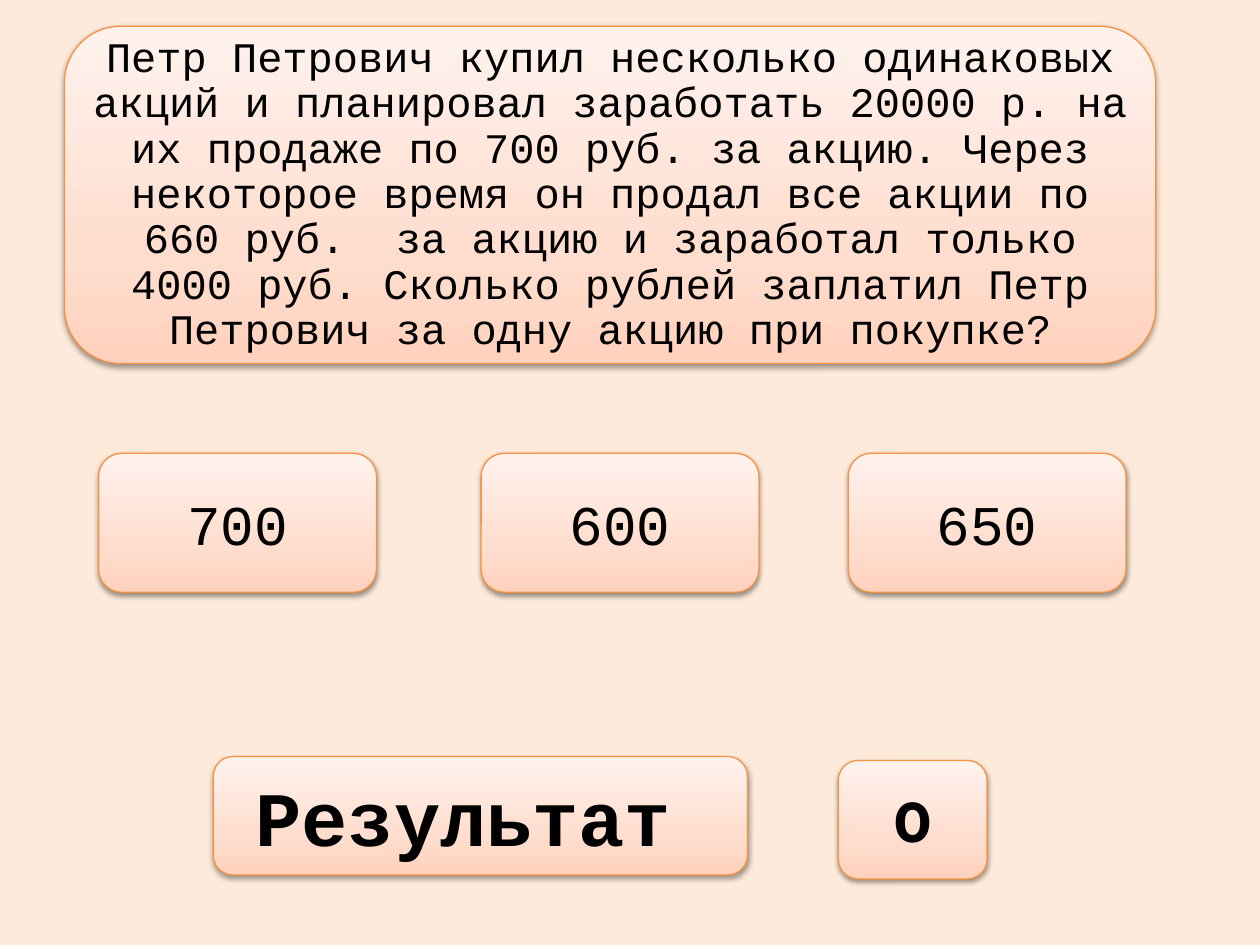
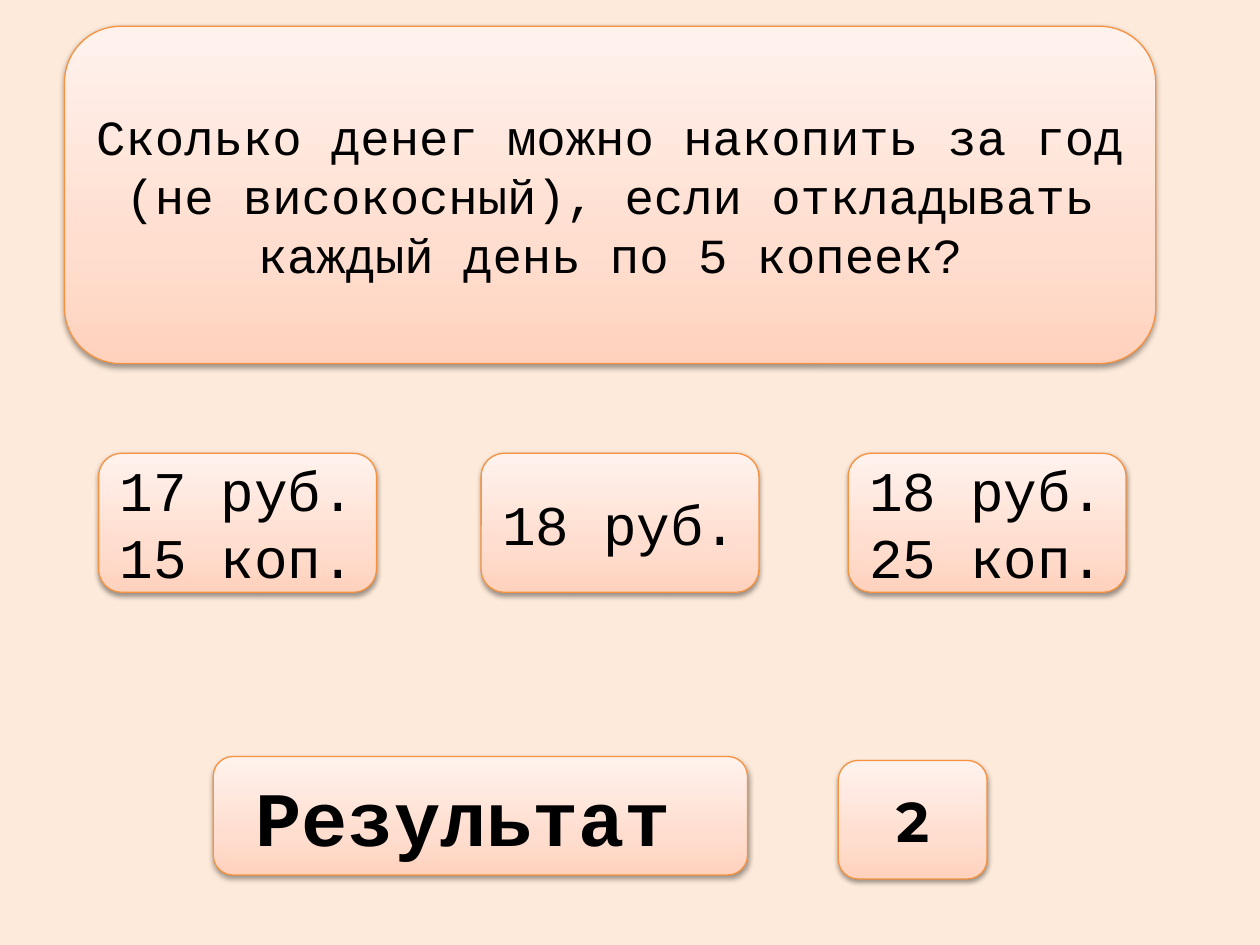
from copy import deepcopy
from dataclasses import dataclass

from lxml import etree
from pptx import Presentation, util as u
from pptx.dml.color import RGBColor
from pptx.enum import shapes, text
from pptx.oxml.ns import qn


@dataclass(frozen=True)
class Theme:
    page: str = "FDEADA"
    ink: str = "000000"
    edge: str = "F69240"
    shadow: str = "000000"
    card_stops: tuple = ((0, "FFD2BD"), (35, "FFDED0"), (100, "FFF2ED"))
    body_font: str = "Courier New"
    score_font: str = "Montserrat"
    long_question: int = 24
    question: int = 28
    answer: int = 32
    result: int = 44
    tight_spacing: float = 0.9


THEME = Theme()

# Boxes are left, top, width, height in centimetres.
QUESTION_BOX = (1.3, 0.53, 22, 6.8)
ANSWERS_BOX = (1.99, 9.14, 20.7, 2.8)
RESULT_BOX = (4.3, 15.25, 15.6, 2.47)

QUIZ = (
    {
        "question": "Петр Петрович купил несколько одинаковых акций и планировал "
        "заработать 20000 р. на их продаже по 700 руб. за акцию. Через некоторое "
        "время он продал все акции по 660 руб.  за акцию и заработал только "
        "4000 руб. Сколько рублей заплатил Петр Петрович за одну акцию при покупке?",
        "question_format": {
            "size": THEME.long_question, "spacing": THEME.tight_spacing},
        "answers": ("700", "600", "650"),
        "score": "0",
    },
    {
        "question": "Сколько денег можно накопить за год (не високосный), "
        "если откладывать каждый день по 5 копеек?",
        "question_format": {"size": THEME.question},
        "answers": ("17 руб. 15 коп. ", "18 руб.", "18 руб. 25 коп."),
        "score": "2",
    },
)


def add_text(shape, words, size=THEME.answer, font=THEME.body_font, bold=False,
             spacing=None):
    """Append one centred span to the shape's first paragraph."""
    frame = shape.text_frame
    frame.word_wrap = True
    frame.vertical_anchor = text.MSO_ANCHOR.MIDDLE
    para = frame.paragraphs[0]
    para.alignment = text.PP_ALIGN.CENTER
    para.line_spacing = spacing
    span = para.add_run()
    span.text = words
    span.font.size = u.Pt(size)
    span.font.name = font
    span.font.bold = bold
    span.font.color.rgb = RGBColor.from_string(THEME.ink)


def fill_gradient(shape):
    shape.fill.gradient()
    shape.fill.gradient_angle = 90
    first = shape.fill.gradient_stops[0]
    first.color.rgb = RGBColor.from_string(THEME.card_stops[0][1])
    stop_list = shape._element.spPr.find(".//" + qn("a:gsLst"))
    pattern = deepcopy(stop_list[0])
    for stop in list(stop_list):
        stop_list.remove(stop)
    for percent, colour in THEME.card_stops:
        stop = deepcopy(pattern)
        stop.set("pos", str(percent * 1000))
        stop[0].set("val", colour)
        stop_list.append(stop)


def add_shadow(shape):
    shape.shadow.inherit = False
    effects = shape._element.spPr.find(qn("a:effectLst"))
    outer = etree.SubElement(
        effects, qn("a:outerShdw"), blurRad=str(u.Pt(3.1)), dist=str(u.Pt(1.6)),
        dir="5400000", rotWithShape="0")
    colour = etree.SubElement(outer, qn("a:srgbClr"), val=THEME.shadow)
    etree.SubElement(colour, qn("a:alpha"), val="38000")


def add_card(page, left, top, width, height):
    card = page.shapes.add_shape(
        shapes.MSO_SHAPE.ROUNDED_RECTANGLE,
        u.Cm(left), u.Cm(top), u.Cm(width), u.Cm(height))
    fill_gradient(card)
    card.line.color.rgb = RGBColor.from_string(THEME.edge)
    card.line.width = u.Pt(0.75)
    add_shadow(card)
    return card


def add_question(page, box, words, question_format):
    add_text(add_card(page, *box), words, **question_format)


def add_answers(page, box, answers):
    left, top, _, height = box
    offsets = (0, 7.71, 15.11)
    for offset, answer in zip(offsets, answers):
        add_text(add_card(page, left + offset, top, 5.6, height), answer)


def add_result(page, box, score):
    """Place the result button at the left of the box and the score at its right."""
    left, top, width, height = box
    score_width, drop = 3, 0.08
    card_height = height - drop
    score_card = add_card(
        page, left + width - score_width, top + drop, score_width, card_height)
    add_text(score_card, score, font=THEME.score_font, bold=True)
    button = add_card(page, left, top, 10.77, card_height)
    add_text(button, "Результат", size=THEME.result, bold=True)
    add_text(button, " ")


def add_quiz_page(deck, question, question_format, answers, score):
    page = deck.slides.add_slide(deck.slide_layouts[6])
    page.background.fill.solid()
    page.background.fill.fore_color.rgb = RGBColor.from_string(THEME.page)
    add_question(page, QUESTION_BOX, question, question_format)
    add_answers(page, ANSWERS_BOX, answers)
    add_result(page, RESULT_BOX, score)


def main():
    deck = Presentation()
    deck.slide_width, deck.slide_height = u.Cm(25.4), u.Cm(19.05)
    for quiz in QUIZ:
        add_quiz_page(deck, **quiz)
    deck.save("out.pptx")


if __name__ == "__main__":
    main()
